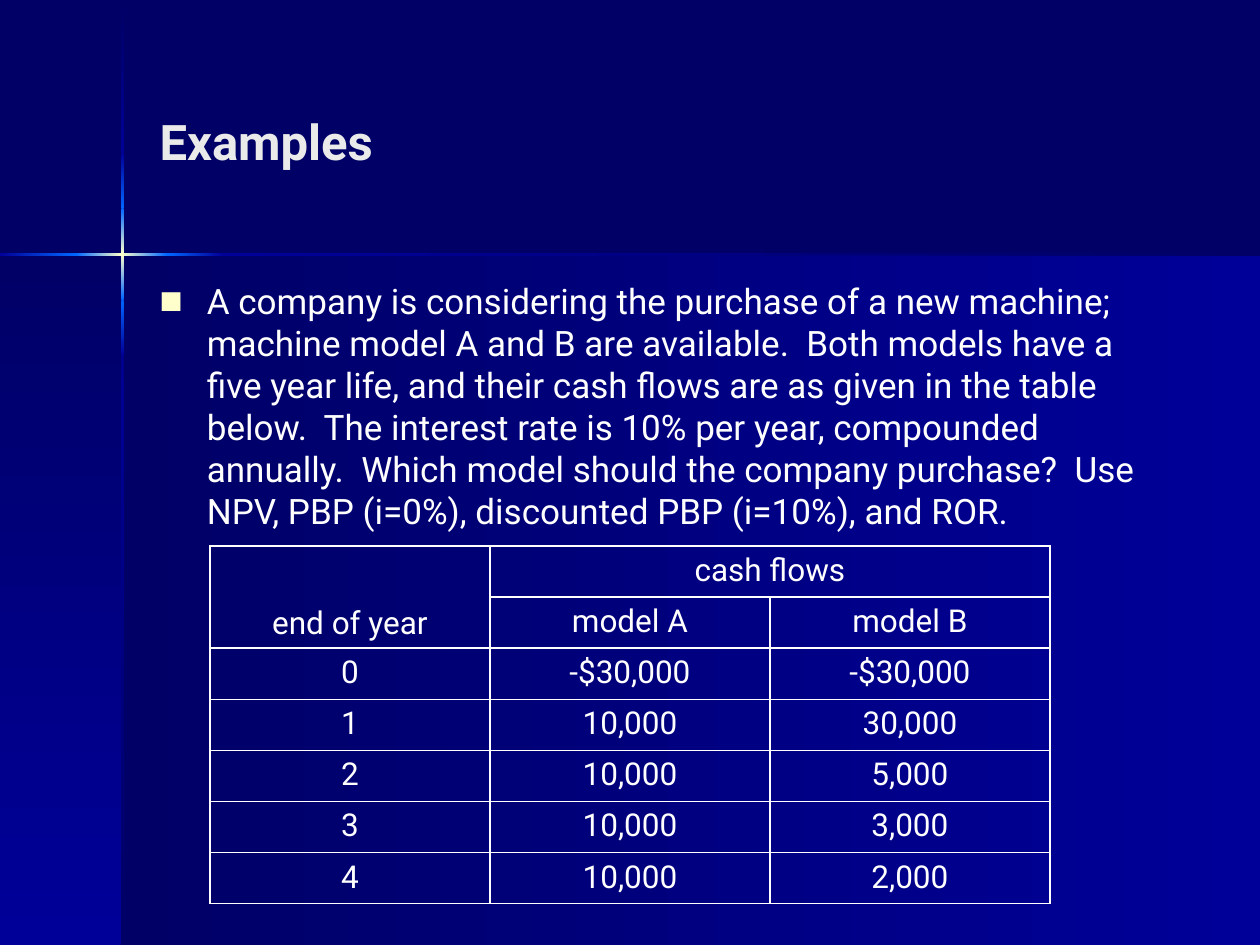
from copy import deepcopy
from dataclasses import dataclass

from lxml import etree
from pptx import Presentation
from pptx.dml.color import RGBColor
from pptx.enum.shapes import MSO_SHAPE
from pptx.enum.text import MSO_ANCHOR, MSO_AUTO_SIZE, PP_ALIGN
from pptx.oxml.ns import qn
from pptx.util import Pt

RECTANGLE = MSO_SHAPE.RECTANGLE
TOP, MIDDLE, BOTTOM = MSO_ANCHOR.TOP, MSO_ANCHOR.MIDDLE, MSO_ANCHOR.BOTTOM
LEFT, CENTER = PP_ALIGN.LEFT, PP_ALIGN.CENTER
NO_AUTOFIT = MSO_AUTO_SIZE.NONE


@dataclass(frozen=True)
class Theme:
    font: str = "Roboto"
    night: str = "000066"
    navy: str = "000099"
    azure: str = "0066FF"
    cream: str = "FFFFCC"
    title: str = "EAEAEA"
    text: str = "FFFFFF"
    title_size: int = 28
    body_size: int = 20
    table_size: int = 18


THEME = Theme()
WIDTH, HEIGHT = 720, 540

TITLE = "Examples"
QUESTION = (
    "A company is considering the purchase of a new machine; machine model A and B "
    "are available.  Both models have a five year life, and their cash flows are as "
    "given in the table below.  The interest rate is 10% per year, compounded "
    "annually.  Which model should the company purchase?  Use NPV, PBP (i=0%), "
    "discounted PBP (i=10%), and ROR."
)
CASH_FLOWS = [
    ("end of year", "cash flows", None),
    (None, "model A", "model B"),
    ("0", "-$30,000", "-$30,000"),
    ("1", "10,000", "30,000"),
    ("2", "10,000", "5,000"),
    ("3", "10,000", "3,000"),
    ("4", "10,000", "2,000"),
]

TITLE_BOX = (84, 24, 594, 113)
BODY_BOX = (84, 156, 594, 324)
BULLET_INDENT = 27
TABLE_LEFT, TABLE_TOP = 120, 312
COLUMN_WIDTH, ROW_HEIGHT = 160, 29.2

CROSS_X, CROSS_Y, BEAM = 70, 145.5, 1.4
FADE_IN = (THEME.night, THEME.navy)
RISE = (THEME.navy, THEME.azure)
GLOW = (THEME.azure, THEME.cream, THEME.azure)
PANELS = [
    (CROSS_X, CROSS_Y, WIDTH - CROSS_X, HEIGHT - CROSS_Y, FADE_IN, False),
    (0, CROSS_Y, CROSS_X, HEIGHT - CROSS_Y, FADE_IN, True),
]
VERTICAL_BEAM = [
    (0.5, 87, FADE_IN),
    (203, HEIGHT, FADE_IN[::-1]),
    (171.5, 203, RISE[::-1]),
    (87, 119, RISE),
    (119, 171.5, GLOW),
]
HORIZONTAL_BEAM = [
    (127.5, WIDTH, FADE_IN[::-1]),
    (0, 43.5, RISE),
    (95.5, 127.5, RISE[::-1]),
    (43.5, 95.5, GLOW),
]


def color(value):
    return RGBColor.from_string(value)


def write(frame, text, size, fill, bold=False, align=LEFT):
    paragraph = frame.paragraphs[0]
    paragraph.alignment = align
    run = paragraph.add_run()
    run.text = text
    run.font.name = THEME.font
    run.font.size = Pt(size)
    run.font.bold = bold
    run.font.color.rgb = color(fill)
    return paragraph


def add_gradient(slide, left, top, width, height, colors, downward):
    shape = slide.shapes.add_shape(RECTANGLE, Pt(left), Pt(top), Pt(width), Pt(height))
    shape.shadow.inherit = False
    shape.line.fill.background()
    shape.fill.gradient()
    shape.fill.gradient_angle = 270 if downward else 0
    stop_list = next(shape._element.iter(qn("a:gsLst")))
    while len(stop_list) < len(colors):
        stop_list.append(deepcopy(stop_list[0]))
    for index, (stop, value) in enumerate(zip(shape.fill.gradient_stops, colors)):
        stop.position = index / (len(colors) - 1)
        stop.color.rgb = color(value)


def add_backdrop(slide):
    slide.background.fill.solid()
    slide.background.fill.fore_color.rgb = color(THEME.night)
    for panel in PANELS:
        add_gradient(slide, *panel)
    for start, end, colors in VERTICAL_BEAM:
        add_gradient(slide, CROSS_X - BEAM / 2, start, BEAM, end - start, colors, True)
    for start, end, colors in HORIZONTAL_BEAM:
        add_gradient(slide, start, CROSS_Y - BEAM / 2, end - start, BEAM, colors, False)


def place(slide, placeholder, box, anchor):
    slide.shapes._spTree.append(placeholder._element)
    placeholder.left, placeholder.top, placeholder.width, placeholder.height = map(Pt, box)
    frame = placeholder.text_frame
    frame.word_wrap = True
    frame.auto_size = NO_AUTOFIT
    frame.vertical_anchor = anchor
    return frame


def add_bullet(paragraph):
    properties = paragraph._p.get_or_add_pPr()
    properties.set("marL", str(Pt(BULLET_INDENT)))
    properties.set("indent", str(-Pt(BULLET_INDENT)))
    bullet_color = etree.SubElement(properties, qn("a:buClr"))
    etree.SubElement(bullet_color, qn("a:srgbClr"), val=THEME.cream)
    etree.SubElement(properties, qn("a:buSzPct"), val="70000")
    etree.SubElement(properties, qn("a:buFont"), typeface=THEME.font)
    etree.SubElement(properties, qn("a:buChar"), char="■")


def format_cell(cell):
    properties = cell._tc.get_or_add_tcPr()
    for side in ("lnL", "lnR", "lnT", "lnB"):
        line = etree.SubElement(properties, qn(f"a:{side}"), w=str(Pt(1)))
        fill = etree.SubElement(line, qn("a:solidFill"))
        etree.SubElement(fill, qn("a:srgbClr"), val=THEME.text)
    cell.fill.background()


def add_cash_flow_table(slide):
    row_count, column_count = len(CASH_FLOWS), len(CASH_FLOWS[0])
    table = slide.shapes.add_table(
        row_count, column_count, Pt(TABLE_LEFT), Pt(TABLE_TOP),
        Pt(COLUMN_WIDTH * column_count), Pt(ROW_HEIGHT * row_count),
    ).table
    table.first_row = table.horz_banding = False
    for column in table.columns:
        column.width = Pt(COLUMN_WIDTH)
    for row, values in enumerate(CASH_FLOWS):
        table.rows[row].height = Pt(ROW_HEIGHT)
        for column, value in enumerate(values):
            cell = table.cell(row, column)
            format_cell(cell)
            if value is not None:
                write(cell.text_frame, value, THEME.table_size, THEME.text, align=CENTER)
    table.cell(0, 0).merge(table.cell(1, 0))
    table.cell(0, 1).merge(table.cell(0, 2))
    table.cell(0, 0).vertical_anchor = BOTTOM


def main():
    presentation = Presentation()
    presentation.slide_width, presentation.slide_height = Pt(WIDTH), Pt(HEIGHT)
    slide = presentation.slides.add_slide(presentation.slide_layouts[1])
    add_backdrop(slide)
    title = place(slide, slide.shapes.title, TITLE_BOX, MIDDLE)
    write(title, TITLE, THEME.title_size, THEME.title, bold=True)
    body = place(slide, slide.placeholders[1], BODY_BOX, TOP)
    question = write(body, QUESTION, THEME.body_size, THEME.text)
    question.space_before = Pt(4)
    add_bullet(question)
    add_cash_flow_table(slide)
    presentation.save("out.pptx")


if __name__ == "__main__":
    main()
